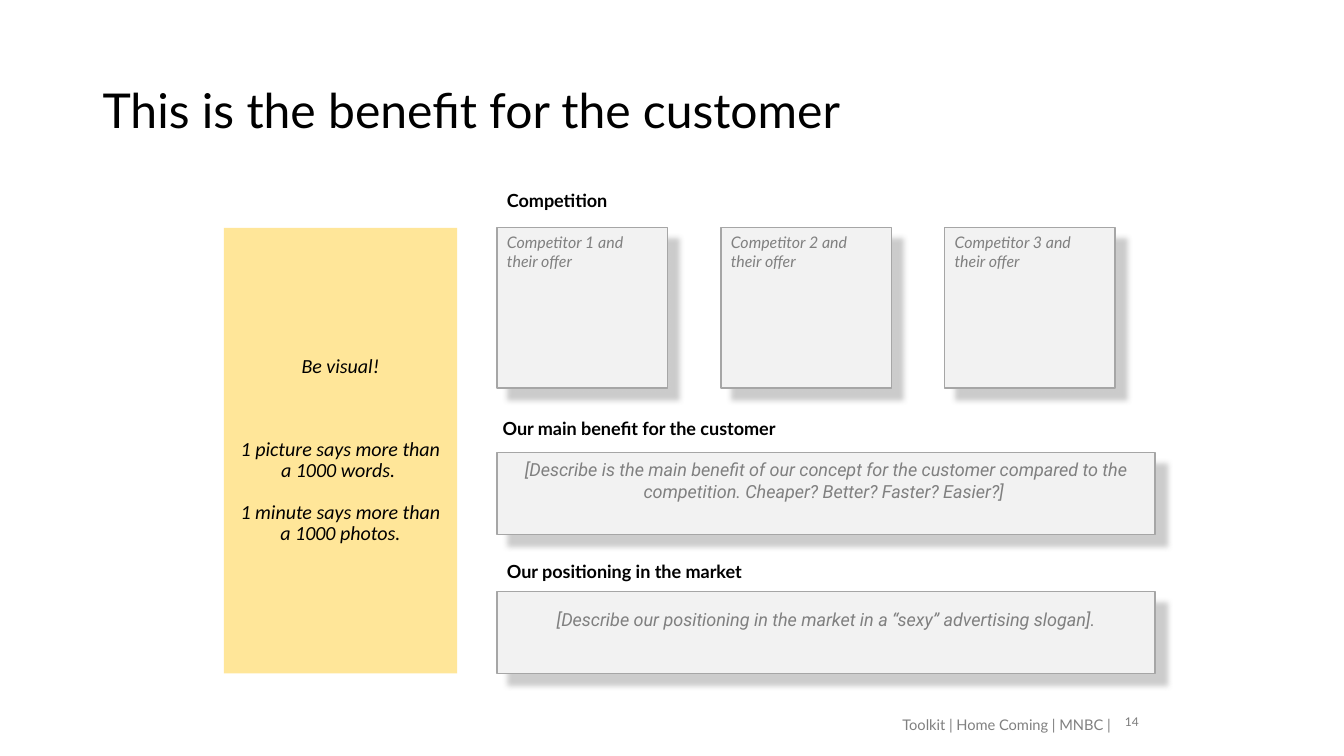
from lxml import etree
from pptx import Presentation
from pptx.dml.color import RGBColor
from pptx.enum.shapes import MSO_SHAPE as Shape
from pptx.enum.text import MSO_ANCHOR as Anchor, PP_ALIGN as Align
from pptx.oxml import parse_xml
from pptx.util import Pt

COLORS = {
    "text": "000000",
    "hint": "808080",
    "page": "7C7C7C",
    "panel": "F2F2F2",
    "border": "A6A6A6",
    "visual": "FFE699",
    "shadow": "808080",
}
DRAWING_NS = "http://schemas.openxmlformats.org/drawingml/2006/main"
SHADOW_XML = (
    f'<a:effectLst xmlns:a="{DRAWING_NS}">'
    f'<a:outerShdw blurRad="{Pt(4)}" dist="{Pt(11)}" dir="2700000" algn="ctr" rotWithShape="0">'
    f'<a:srgbClr val="{COLORS["shadow"]}"><a:alpha val="40000"/></a:srgbClr>'
    "</a:outerShdw></a:effectLst>"
)
CONTENT_LEFT = 355
CONTENT_WIDTH = 470
CONTENT_TOP = 162.7
CONTENT_BOTTOM = 481
HEADING_HEIGHT = 23
STATEMENT_HEIGHT = 58.5


def rgb(name):
    return RGBColor.from_string(COLORS[name])


def write(frame, lines, size, color="text", font="Lato", bold=False, italic=False,
          align=Align.LEFT, anchor=Anchor.TOP, wrap=True):
    """Fill a text frame with one paragraph per line and return the paragraphs."""
    frame.word_wrap = wrap
    frame.vertical_anchor = anchor
    for index, line in enumerate(lines):
        paragraph = frame.paragraphs[0] if index == 0 else frame.add_paragraph()
        paragraph.alignment = align
        run = paragraph.add_run()
        run.text = line
        run.font.name = font
        run.font.size = Pt(size)
        run.font.bold = bold
        run.font.italic = italic
        run.font.color.rgb = rgb(color)
    return frame.paragraphs


def add_text(slide, box, line, size, **style):
    label = slide.shapes.add_textbox(*map(Pt, box))
    return write(label.text_frame, [line], size, **style)


def add_panel(slide, box, fill, bordered=True):
    """Add a filled rectangle; a bordered one also casts a shadow."""
    panel = slide.shapes.add_shape(Shape.RECTANGLE, *map(Pt, box))
    panel.shadow.inherit = False
    panel.fill.solid()
    panel.fill.fore_color.rgb = rgb(fill)
    if bordered:
        panel.line.color.rgb = rgb("border")
        panel.line.width = Pt(1)
        properties = panel.fill._xPr
        properties.replace(properties.find(f"{{{DRAWING_NS}}}effectLst"), parse_xml(SHADOW_XML))
    else:
        panel.line.fill.background()
    return panel.text_frame


def add_title(slide, box):
    title = add_text(slide, box, "This is the benefit for the customer", 34.3,
                     anchor=Anchor.MIDDLE)
    title[0].line_spacing = 0.9


def add_visual_tip(slide, box):
    tip = write(add_panel(slide, box, "visual", bordered=False),
                ["Be visual!", "1 picture says more than a 1000 words. ",
                 "1 minute says more than a 1000 photos."],
                14.3, font="Calibri", italic=True, align=Align.CENTER, anchor=Anchor.MIDDLE)
    for paragraph, space in zip(tip, (0, 43.5, 14)):
        paragraph.line_spacing = 0.9
        paragraph.space_before = Pt(space)


def add_heading(slide, left, top, text):
    add_text(slide, (left, top, 290, HEADING_HEIGHT), text, 12.9, bold=True)


def add_competition(slide, box):
    """Place a heading above three equally spaced competitor cards."""
    left, top, width, height = box
    card_width = 121.7
    pitch = (width - card_width) / 2
    add_heading(slide, left, top - 31, "Competition")
    for index in range(3):
        card = add_panel(slide, (left + index * pitch, top, card_width, height), "panel")
        write(card, [f"Competitor {index + 1} and their offer"], 11.4,
              color="hint", italic=True)


def add_statement(slide, box, heading, heading_offset, prompt):
    """Place a heading above a wide panel, offset from the panel's corner."""
    left, top = box[:2]
    shift, rise = heading_offset
    add_heading(slide, left + shift, top - rise, heading)
    panel = add_panel(slide, box, "panel")
    panel.margin_bottom = Pt(22.7)
    write(panel, [prompt], 12.9, color="hint", font="Roboto", italic=True,
          align=Align.CENTER, anchor=Anchor.MIDDLE)


def add_footer(slide, box):
    left, top, width, height = box
    page_width = 24.5
    add_text(slide, (left, top + 1.5, width - page_width + 7, height),
             "Toolkit | Home Coming | MNBC | ", 10.5, color="hint",
             align=Align.RIGHT, wrap=False)
    add_text(slide, (left + width - page_width, top, page_width, 18), "14", 8.6,
             color="page", align=Align.CENTER, anchor=Anchor.MIDDLE)


def main():
    presentation = Presentation()
    presentation.slide_width = Pt(960)
    presentation.slide_height = Pt(540)
    slide = presentation.slides.add_slide(presentation.slide_layouts[6])

    add_title(slide, (66.2, 28.8, 828, 104.4))
    add_visual_tip(slide, (160, CONTENT_TOP, 166.5, CONTENT_BOTTOM - CONTENT_TOP + 3.7 - 3.7))
    add_competition(slide, (CONTENT_LEFT, CONTENT_TOP, 441.5, 114.5))
    add_statement(slide, (CONTENT_LEFT, 323.2, CONTENT_WIDTH, STATEMENT_HEIGHT),
                  "Our main benefit for the customer", (-3, 28.8),
                  "[Describe is the main benefit of our concept for the customer compared "
                  "to the competition. Cheaper? Better? Faster? Easier?] ")
    add_statement(slide,
                  (CONTENT_LEFT, CONTENT_BOTTOM - STATEMENT_HEIGHT, CONTENT_WIDTH, STATEMENT_HEIGHT),
                  "Our positioning in the market", (0, 26),
                  "[Describe our positioning in the market in a “sexy” advertising slogan].")
    add_footer(slide, (631.5, 506.2, 189.3, 20))
    presentation.save("out.pptx")


if __name__ == "__main__":
    main()
